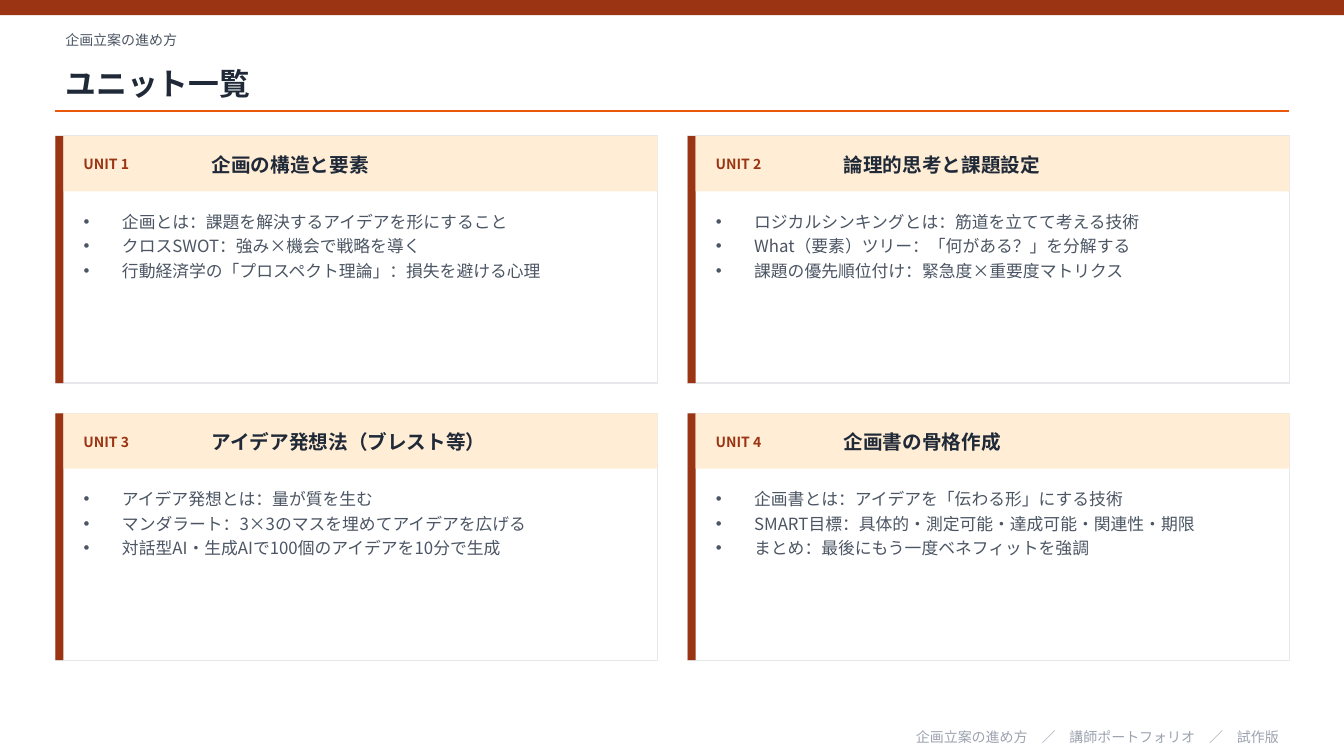
"""Build the unit overview slide of a planning course."""
from dataclasses import dataclass

from lxml import etree
from pptx import Presentation
from pptx.dml.color import RGBColor
from pptx.enum.shapes import MSO_CONNECTOR, MSO_SHAPE
from pptx.enum.text import MSO_ANCHOR, MSO_AUTO_SIZE, PP_ALIGN
from pptx.oxml.ns import qn
from pptx.util import Inches, Pt

RECTANGLE = MSO_SHAPE.RECTANGLE
STRAIGHT = MSO_CONNECTOR.STRAIGHT
LEFT, RIGHT = PP_ALIGN.LEFT, PP_ALIGN.RIGHT
TOP, MIDDLE = MSO_ANCHOR.TOP, MSO_ANCHOR.MIDDLE
NO_FIT = MSO_AUTO_SIZE.NONE

RUST = RGBColor(0x9A, 0x34, 0x12)
ORANGE = RGBColor(0xEA, 0x58, 0x0C)
PEACH = RGBColor(0xFF, 0xED, 0xD5)
WHITE = RGBColor(0xFF, 0xFF, 0xFF)
BORDER = RGBColor(0xE5, 0xE7, 0xEB)
INK = RGBColor(0x1F, 0x29, 0x37)
SLATE = RGBColor(0x4B, 0x55, 0x63)
MIST = RGBColor(0x9C, 0xA3, 0xAF)

FONT = "Noto Sans CJK JP"
COMPARISON_LAYOUT = 4
PAGE_WIDTH, PAGE_HEIGHT = 13.33, 7.5
MARGIN, CONTENT_WIDTH = 0.55, 12.23
CARD_TOP, CARD_WIDTH, CARD_HEIGHT = 1.35, 5.97, 2.45
COLUMN_STEP, ROW_STEP = 6.27, 2.75
STRIPE_WIDTH, HEADER_HEIGHT = 0.08, 0.55
LIST_INDENT = 0.38


@dataclass(frozen=True)
class Area:
    left: float
    top: float
    width: float
    height: float

    def lengths(self) -> list:
        return [Inches(n) for n in (self.left, self.top, self.width, self.height)]


@dataclass(frozen=True)
class Unit:
    title: str
    points: tuple[str, ...]


UNITS = (
    Unit("企画の構造と要素", (
        "企画とは：課題を解決するアイデアを形にすること",
        "クロスSWOT：強み×機会で戦略を導く",
        "行動経済学の「プロスペクト理論」：損失を避ける心理")),
    Unit("論理的思考と課題設定", (
        "ロジカルシンキングとは：筋道を立てて考える技術",
        "What（要素）ツリー：「何がある？」を分解する",
        "課題の優先順位付け：緊急度×重要度マトリクス")),
    Unit("アイデア発想法（ブレスト等）", (
        "アイデア発想とは：量が質を生む",
        "マンダラート：3×3のマスを埋めてアイデアを広げる",
        "対話型AI・生成AIで100個のアイデアを10分で生成")),
    Unit("企画書の骨格作成", (
        "企画書とは：アイデアを「伝わる形」にする技術",
        "SMART目標：具体的・測定可能・達成可能・関連性・期限",
        "まとめ：最後にもう一度ベネフィットを強調")),
)


def place(holder, area: Area) -> None:
    """Move a placeholder to an area and bring it to the front."""
    holder.left, holder.top, holder.width, holder.height = area.lengths()
    holder.element.getparent().append(holder.element)


def write(box, *lines: str, size: float, color: RGBColor, bold: bool = False,
          align=LEFT, anchor=MIDDLE, bulleted: bool = False) -> None:
    """Fill a box with one formatted paragraph per line."""
    frame = box.text_frame
    frame.auto_size = NO_FIT
    frame.word_wrap = True
    frame.vertical_anchor = anchor
    for number, line in enumerate(lines):
        para = frame.add_paragraph() if number else frame.paragraphs[0]
        if bulleted:
            properties = para._p.get_or_add_pPr()
            properties.set("marL", str(Inches(LIST_INDENT)))
            properties.set("indent", str(-Inches(LIST_INDENT)))
            etree.SubElement(properties, qn("a:buChar")).set("char", "•")
            para.space_after = Pt(3)
        para.space_before = Pt(0)
        para.alignment = align
        span = para.add_run()
        span.text = line
        span.font.name = FONT
        span.font.size = Pt(size)
        span.font.bold = bold
        span.font.color.rgb = color


def add_label(page, area: Area, text: str, **style) -> None:
    """Add a text box with one line of text."""
    write(page.shapes.add_textbox(*area.lengths()), text, **style)


def add_block(page, area: Area, fill: RGBColor, border: RGBColor | None = None) -> None:
    """Add a flat rectangle, outlined when a border colour is given."""
    block = page.shapes.add_shape(RECTANGLE, *area.lengths())
    block.shadow.inherit = False
    block.fill.solid()
    block.fill.fore_color.rgb = fill
    if border is None:
        block.line.fill.background()
    else:
        block.line.color.rgb = border
        block.line.width = Pt(1)


def add_rule(page, left: float, top: float, width: float) -> None:
    """Add the horizontal rule below the title."""
    rule = page.shapes.add_connector(
        STRAIGHT, Inches(left), Inches(top), Inches(left + width), Inches(top))
    rule.line.color.rgb = ORANGE
    rule.line.width = Pt(1)
    etree.SubElement(rule._element.spPr, qn("a:effectLst"))


def add_card(page, holder, index: int, unit: Unit) -> None:
    """Draw one unit card in the two-column grid."""
    row, column = divmod(index, 2)
    left = MARGIN + column * COLUMN_STEP
    top = CARD_TOP + row * ROW_STEP
    inner = left + STRIPE_WIDTH
    add_block(page, Area(left, top, CARD_WIDTH, CARD_HEIGHT), WHITE, BORDER)
    add_block(page, Area(left, top, STRIPE_WIDTH, CARD_HEIGHT), RUST)
    add_block(page, Area(inner, top, CARD_WIDTH - STRIPE_WIDTH, HEADER_HEIGHT), PEACH)
    add_label(page, Area(inner + 0.1, top + 0.08, 1.2, 0.4), f"UNIT {index + 1}",
              size=10, color=RUST, bold=True)
    add_label(page, Area(left + 1.45, top + 0.08, 4.37, 0.4), unit.title,
              size=14, color=INK, bold=True)
    place(holder, Area(inner + 0.1, top + 0.7, 5.61, 1.6))
    write(holder, *unit.points, size=12, color=SLATE, anchor=TOP, bulleted=True)


def main() -> None:
    """Create the deck and save it."""
    deck = Presentation()
    deck.slide_width, deck.slide_height = Inches(PAGE_WIDTH), Inches(PAGE_HEIGHT)
    page = deck.slides.add_slide(deck.slide_layouts[COMPARISON_LAYOUT])
    title, *lists = page.placeholders

    add_block(page, Area(0, 0, PAGE_WIDTH, 0.15), RUST)
    add_label(page, Area(MARGIN, 0.25, CONTENT_WIDTH, 0.3), "企画立案の進め方",
              size=10, color=SLATE)
    place(title, Area(MARGIN, 0.55, CONTENT_WIDTH, 0.55))
    write(title, "ユニット一覧", size=22, color=INK, bold=True)
    add_rule(page, MARGIN, 1.1, CONTENT_WIDTH)

    for index, (holder, unit) in enumerate(zip(lists, UNITS)):
        add_card(page, holder, index, unit)

    add_label(page, Area(MARGIN, 7.2, CONTENT_WIDTH, 0.22),
              "企画立案の進め方　／　講師ポートフォリオ　／　試作版",
              size=10, color=MIST, align=RIGHT)
    deck.save("out.pptx")


if __name__ == "__main__":
    main()
